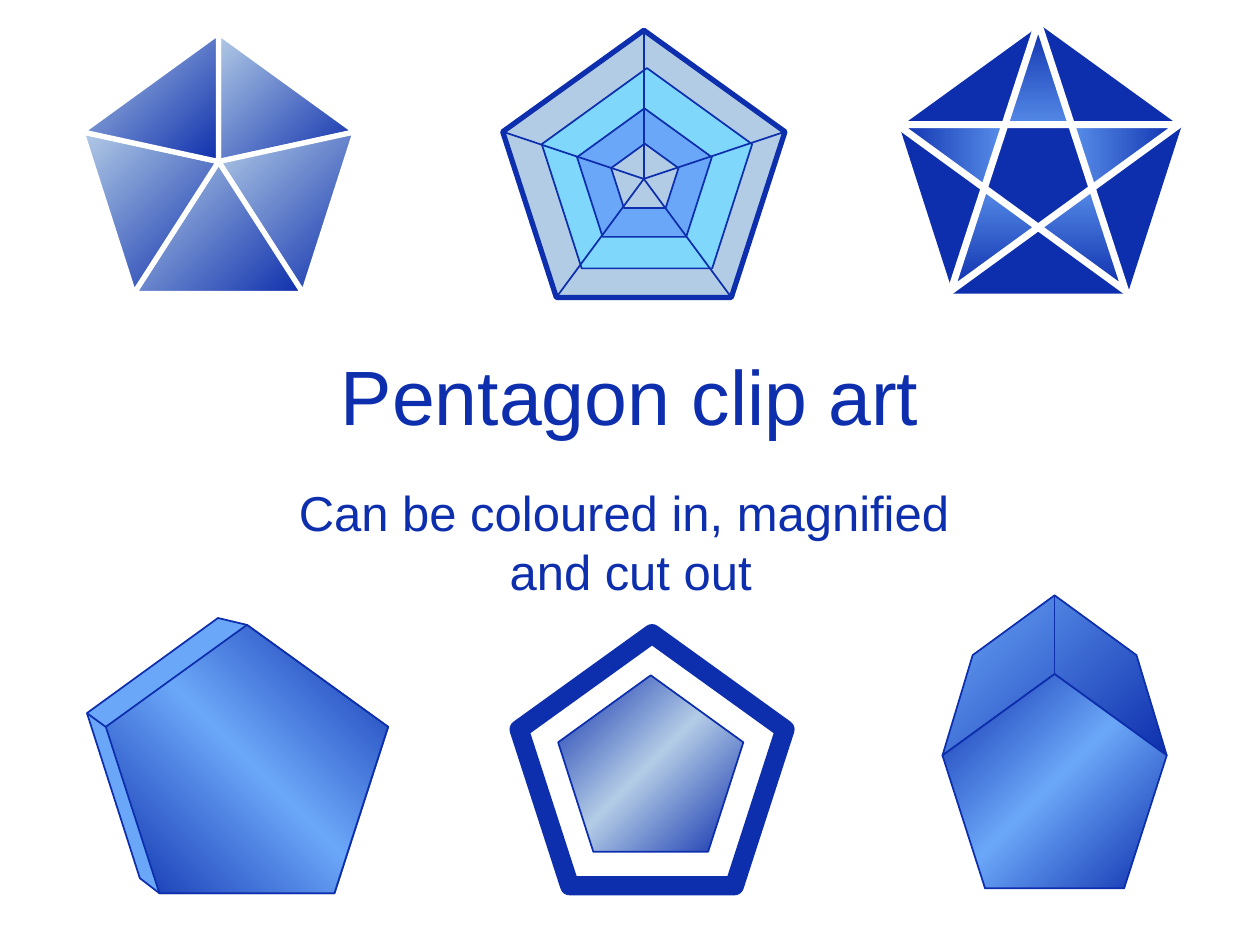
"""Builds a title slide with six pentagon drawings on a grid of 100 by 75 cells."""
from copy import deepcopy
from dataclasses import dataclass
from typing import Optional

from lxml import etree
from pptx import Presentation
from pptx import util as u
from pptx.dml.color import RGBColor
from pptx.enum import shapes, text
from pptx.oxml import parse_xml
from pptx.oxml.ns import nsdecls, qn

COLUMNS, ROWS = 100, 75
CELL = u.Inches(0.1)
COLORS = {"navy": "0E2FAD", "sky": "6BA7F8", "aqua": "7FD7FC",
          "mist": "B3CCE6", "white": "FFFFFF"}
Point = tuple[float, float]


@dataclass(frozen=True)
class Gradient:
    """Evenly spaced colours, along an angle or outward from the centre."""
    colors: tuple[str, ...]
    angle: Optional[int] = 45


@dataclass(frozen=True)
class Pentagon:
    """A pentagon given by its bounding box in grid cells."""
    left: float
    top: float
    width: float
    height: float

    def corners(self) -> list[Point]:
        """Return the corners clockwise from the apex."""
        shares = [(0.5, 0), (1, 0.38), (0.81, 1), (0.19, 1), (0, 0.38)]
        return [(self.left + x * self.width, self.top + y * self.height)
                for x, y in shares]


def cells(count: float) -> int:
    """Convert grid cells to a length."""
    return round(count * CELL)


def rgb(name: str) -> RGBColor:
    """Look up a named colour."""
    return RGBColor.from_string(COLORS[name])


def apply_gradient(shape, gradient: Gradient) -> None:
    """Swap the solid fill of a shape for a gradient."""
    last = len(gradient.colors) - 1
    stops = "".join(
        f'<a:gs pos="{100000 * i // last}"><a:srgbClr val="{COLORS[name]}"/></a:gs>'
        for i, name in enumerate(gradient.colors))
    if gradient.angle is None:
        course = ('<a:path path="rect"><a:fillToRect l="50000" t="50000" '
                  'r="50000" b="50000"/></a:path>')
    else:
        course = f'<a:lin ang="{gradient.angle * 60000}" scaled="0"/>'
    fill = parse_xml(f'<a:gradFill {nsdecls("a")} rotWithShape="1">'
                     f'<a:gsLst>{stops}</a:gsLst>{course}</a:gradFill>')
    solid = shape._element.spPr.find(qn("a:solidFill"))
    solid.getparent().replace(solid, fill)


def draw_outline(slide, points: list[Point], fill: str | Gradient | None,
                 line: Optional[str] = "navy", weight: float = 1) -> None:
    """Draw a closed polygon."""
    start, *rest = [(cells(x), cells(y)) for x, y in points]
    builder = slide.shapes.build_freeform(*start)
    builder.add_line_segments(rest, close=True)
    shape = builder.convert_to_shape()
    shape.shadow.inherit = False
    if fill is None:
        shape.fill.background()
    else:
        shape.fill.solid()
        if isinstance(fill, Gradient):
            apply_gradient(shape, fill)
        else:
            shape.fill.fore_color.rgb = rgb(fill)
    if line is None:
        shape.line.fill.background()
    else:
        shape.line.color.rgb = rgb(line)
        shape.line.width = u.Pt(weight)


def draw_edge(slide, start: Point, end: Point) -> None:
    """Draw a thin straight edge."""
    edge = slide.shapes.add_connector(
        shapes.MSO_CONNECTOR.STRAIGHT, *map(cells, (*start, *end)))
    edge.line.color.rgb = rgb("navy")
    edge.line.width = u.Pt(1)
    etree.SubElement(edge._element.spPr, qn("a:effectLst"))


def write(holder, box: tuple[float, ...], wording: str, size: int) -> None:
    """Place a placeholder and format its text."""
    holder.left, holder.top, holder.width, holder.height = map(cells, box)
    frame = holder.text_frame
    frame.text = wording
    frame.auto_size = text.MSO_AUTO_SIZE.NONE
    for paragraph in frame.paragraphs:
        paragraph.alignment = text.PP_ALIGN.CENTER
        for run in paragraph.runs:
            run.font.name = "Arial"
            run.font.size = u.Pt(size)
            run.font.color.rgb = rgb("navy")
        for line_break in paragraph._p.findall(qn("a:br")):
            line_break.append(deepcopy(paragraph.runs[0]._r.rPr))


def draw_wedges(slide) -> None:
    """Draw the pentagon cut into five triangles."""
    hub = (17.35, 12.83)
    corners = Pentagon(6.5, 2.6, 21.7, 20.7).corners()
    for corner, following in zip(corners, corners[1:] + corners[:1]):
        draw_outline(slide, [hub, corner, following],
                     Gradient(("mist", "navy")), "white", 3)


def draw_star(slide) -> None:
    """Draw the pentagon with a five-pointed star inside."""
    draw_outline(slide, Pentagon(71.4, 2, 22.35, 21.3).corners(), "navy", None)
    corners = Pentagon(71.2, 1.8, 22.4, 21.3).corners()
    draw_outline(slide, [corners[3 * i % 5] for i in range(5)],
                 Gradient(("sky", "navy"), None), "white", 4)


def draw_web(slide) -> None:
    """Draw the nested pentagons joined by spokes."""
    outer = Pentagon(39.9, 2.4, 22.4, 21.2)
    rings = [(outer, "mist", 3), (Pentagon(43, 5.4, 16.7, 15.9), "aqua", 1),
             (Pentagon(45.8, 8.6, 10.7, 10.2), "sky", 1),
             (Pentagon(48.5, 11.4, 5.35, 5.1), "mist", 1)]
    for ring, fill, weight in rings:
        draw_outline(slide, ring.corners(), fill, weight=weight)
    for corner in outer.corners():
        draw_edge(slide, (51.1, 14.2), corner)


def draw_slab(slide) -> None:
    """Draw the thick pentagon seen from the left."""
    front = Pentagon(8.4, 49.6, 22.4, 21.3)
    apex, right, low_right, low_left, left = front.corners()
    back_left = (6.9, 56.6)
    draw_outline(slide, [low_left, (11.1, 69.7), back_left, (17.3, 49.05),
                         apex, right, low_right], "sky")
    draw_outline(slide, front.corners(), Gradient(("navy", "sky", "navy"), 315))
    draw_edge(slide, back_left, left)


def draw_frame(slide) -> None:
    """Draw the pentagon inside a heavy border."""
    draw_outline(slide, Pentagon(41.2, 50.3, 21.1, 20).corners(), None, weight=11)
    draw_outline(slide, Pentagon(44.3, 53.6, 14.7, 14).corners(),
                 Gradient(("navy", "mist", "navy")))


def draw_prism(slide) -> None:
    """Draw the pentagonal prism seen from above."""
    front = Pentagon(74.8, 53.5, 17.8, 17)
    apex, right, _, _, left = front.corners()
    ridge = (83.7, 47.25)
    draw_outline(slide, [apex, left, (77.2, 52), ridge, (90.2, 52), right],
                 Gradient(("sky", "navy")))
    draw_outline(slide, front.corners(), Gradient(("navy", "sky", "navy")))
    draw_edge(slide, ridge, apex)


def main() -> None:
    """Build and save the slide."""
    deck = Presentation()
    deck.slide_width, deck.slide_height = cells(COLUMNS), cells(ROWS)
    slide = deck.slides.add_slide(deck.slide_layouts[0])
    title, subtitle = slide.placeholders
    write(title, (7.5, 23.3, 85, 16.1), "Pentagon clip art", 44)
    title.text_frame.vertical_anchor = text.MSO_ANCHOR.MIDDLE
    write(subtitle, (9, 37.8, 82.1, 19.2),
          "Can be coloured in, magnified \vand cut out", 28)
    for draw in (draw_wedges, draw_star, draw_slab, draw_web, draw_frame, draw_prism):
        draw(slide)
    deck.save("out.pptx")


if __name__ == "__main__":
    main()
